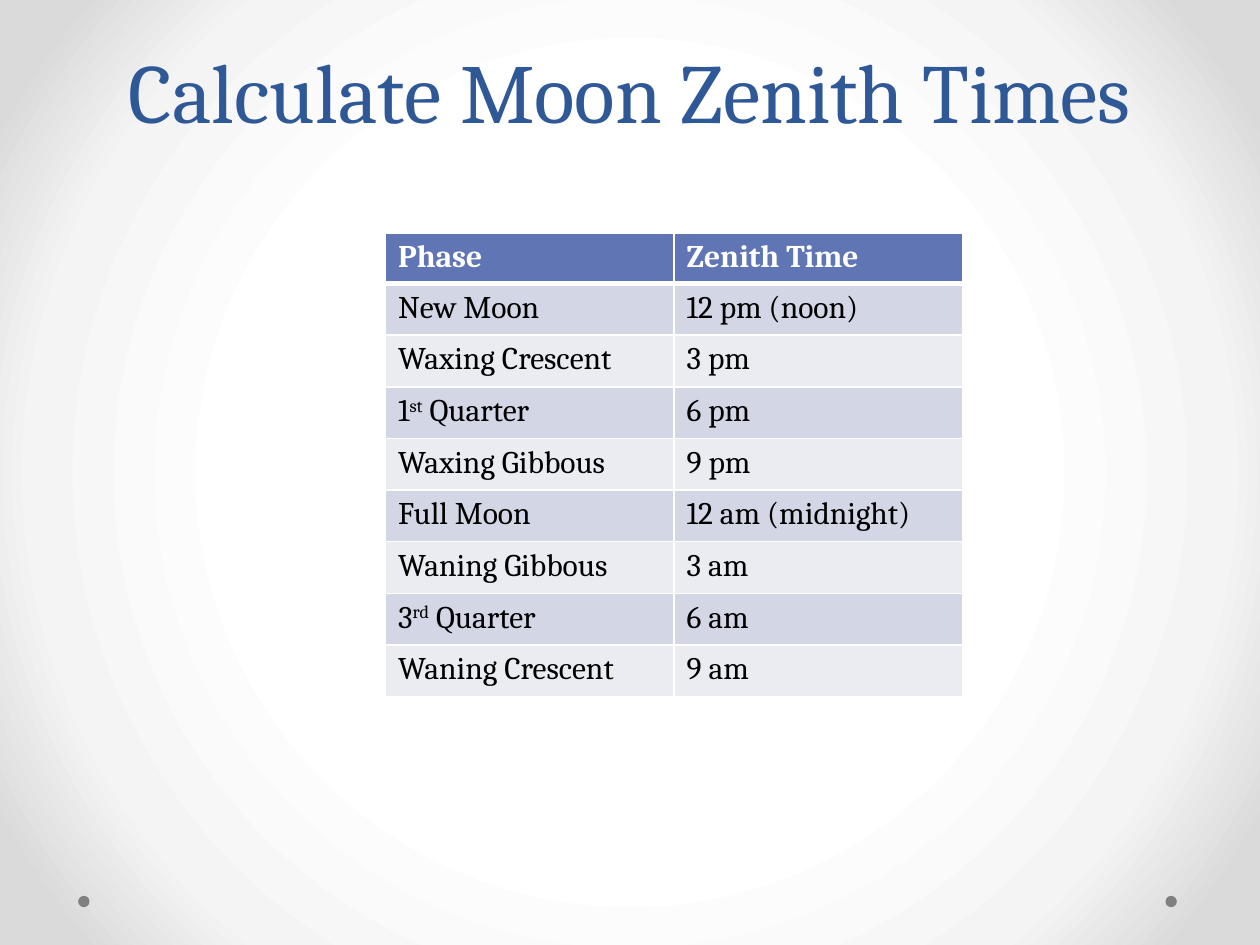
from lxml.etree import SubElement
from pptx import Presentation
from pptx.dml.color import RGBColor
from pptx.enum.shapes import MSO_SHAPE
from pptx.enum.text import MSO_ANCHOR, PP_ALIGN
from pptx.oxml import parse_xml
from pptx.oxml.ns import nsdecls, qn
from pptx.util import Inches, Pt

TITLE_FORMAT = {"name": "Cambria", "size": Pt(48)}
CELL_FORMAT = {"name": "Cambria", "size": Pt(18), "bold": False}
HEADER_FORMAT = {**CELL_FORMAT, "bold": True}

# A tuple holds text before, inside and after a superscript
MOON_ROWS = [
    ("Phase", "Zenith Time"),
    ("New Moon", "12 pm (noon)"),
    ("Waxing Crescent", "3 pm"),
    (("1", "st", " Quarter"), "6 pm"),
    ("Waxing Gibbous", "9 pm"),
    ("Full Moon", "12 am (midnight)"),
    ("Waning Gibbous", "3 am"),
    (("3", "rd", " Quarter"), "6 am"),
    ("Waning Crescent", "9 am"),
]


def color(hex_value):
    return RGBColor.from_string(hex_value)


class SlideBuilder:
    title_color = "2F5897"
    dot_color = "808080"
    header_fill = "6076B4"
    band_fills = ("D2D6E5", "EAECF2")
    border_color = "FFFFFF"

    def __init__(self, slide):
        self.slide = slide

    def background(self, stops):
        stop_xml = "".join(
            f'<a:gs pos="{percent * 1000}"><a:srgbClr val="{value}"/></a:gs>'
            for percent, value in stops
        )
        background = parse_xml(
            f'<p:bg {nsdecls("p", "a")}><p:bgPr><a:gradFill rotWithShape="1">'
            f"<a:gsLst>{stop_xml}</a:gsLst>"
            '<a:path path="circle">'
            '<a:fillToRect l="50000" t="50000" r="50000" b="50000"/></a:path>'
            "</a:gradFill><a:effectLst/></p:bgPr></p:bg>"
        )
        self.slide._element.cSld.insert(0, background)

    def dot(self, left, top, size):
        shape = self.slide.shapes.add_shape(
            MSO_SHAPE.OVAL, Inches(left), Inches(top), Inches(size), Inches(size)
        )
        shape.shadow.inherit = False
        shape.fill.solid()
        shape.fill.fore_color.rgb = color(self.dot_color)
        shape.line.fill.background()

    def add_run(self, paragraph, text, formats, hex_value):
        run = paragraph.add_run()
        run.text = text
        for attribute, value in formats.items():
            setattr(run.font, attribute, value)
        run.font.color.rgb = color(hex_value)
        return run

    def title(self, text, left, top, width, height):
        shape = self.slide.shapes.add_textbox(
            Inches(left), Inches(top), Inches(width), Inches(height)
        )
        frame = shape.text_frame
        frame.word_wrap = True
        frame.vertical_anchor = MSO_ANCHOR.BOTTOM
        paragraph = frame.paragraphs[0]
        paragraph.alignment = PP_ALIGN.CENTER
        paragraph.line_spacing = Pt(58)
        self.add_run(paragraph, text, TITLE_FORMAT, self.title_color)

    def cell_borders(self, cell, widths):
        properties = cell._tc.get_or_add_tcPr()
        for index, (side, width) in enumerate(widths.items()):
            line = parse_xml(
                f'<a:{side} {nsdecls("a")} w="{Pt(width)}"/>'
            )
            fill = SubElement(line, qn("a:solidFill"))
            SubElement(fill, qn("a:srgbClr"), val=self.border_color)
            properties.insert(index, line)

    def cell(self, cell, content, row_index):
        is_header = row_index == 0
        cell.fill.solid()
        cell.fill.fore_color.rgb = color(
            self.header_fill if is_header else self.band_fills[(row_index - 1) % 2]
        )
        # A thick rule divides the header from the body
        self.cell_borders(cell, {
            "lnL": 1,
            "lnR": 1,
            "lnT": 3 if row_index == 1 else 1,
            "lnB": 3 if is_header else 1,
        })
        formats = HEADER_FORMAT if is_header else CELL_FORMAT
        text_color = "FFFFFF" if is_header else "000000"
        parts = (content,) if isinstance(content, str) else content
        for index, part in enumerate(parts):
            run = self.add_run(
                cell.text_frame.paragraphs[0], part, formats, text_color
            )
            if index == 1:
                run._r.get_or_add_rPr().set("baseline", "30000")

    def table(self, rows, left, top, column_width, header_height, row_height):
        column_count = len(rows[0])
        height = header_height + row_height * (len(rows) - 1)
        table = self.slide.shapes.add_table(
            len(rows), column_count, Inches(left), Inches(top),
            Inches(column_width * column_count), Inches(height),
        ).table
        for column in table.columns:
            column.width = Inches(column_width)
        for row_index, contents in enumerate(rows):
            table.rows[row_index].height = Inches(
                row_height if row_index else header_height
            )
            for column_index, content in enumerate(contents):
                self.cell(table.cell(row_index, column_index), content, row_index)


def main():
    presentation = Presentation()
    presentation.slide_width = Inches(10)
    presentation.slide_height = Inches(7.5)
    slide = presentation.slides.add_slide(presentation.slide_layouts[6])
    builder = SlideBuilder(slide)

    # Backdrop with a dot in each lower corner
    builder.background([(50, "FFFFFF"), (76, "F4F4F4"), (92, "DADADA")])
    for left in (9.25, 0.62):
        builder.dot(left, 7.11, 0.09)

    # Title
    builder.title("Calculate Moon Zenith Times", 0.5, 0, 9, 1.16)

    # Zenith time for each phase
    builder.table(MOON_ROWS, 3.06, 1.85, 2.29, 0.32, 0.41)

    presentation.save("out.pptx")


if __name__ == "__main__":
    main()
